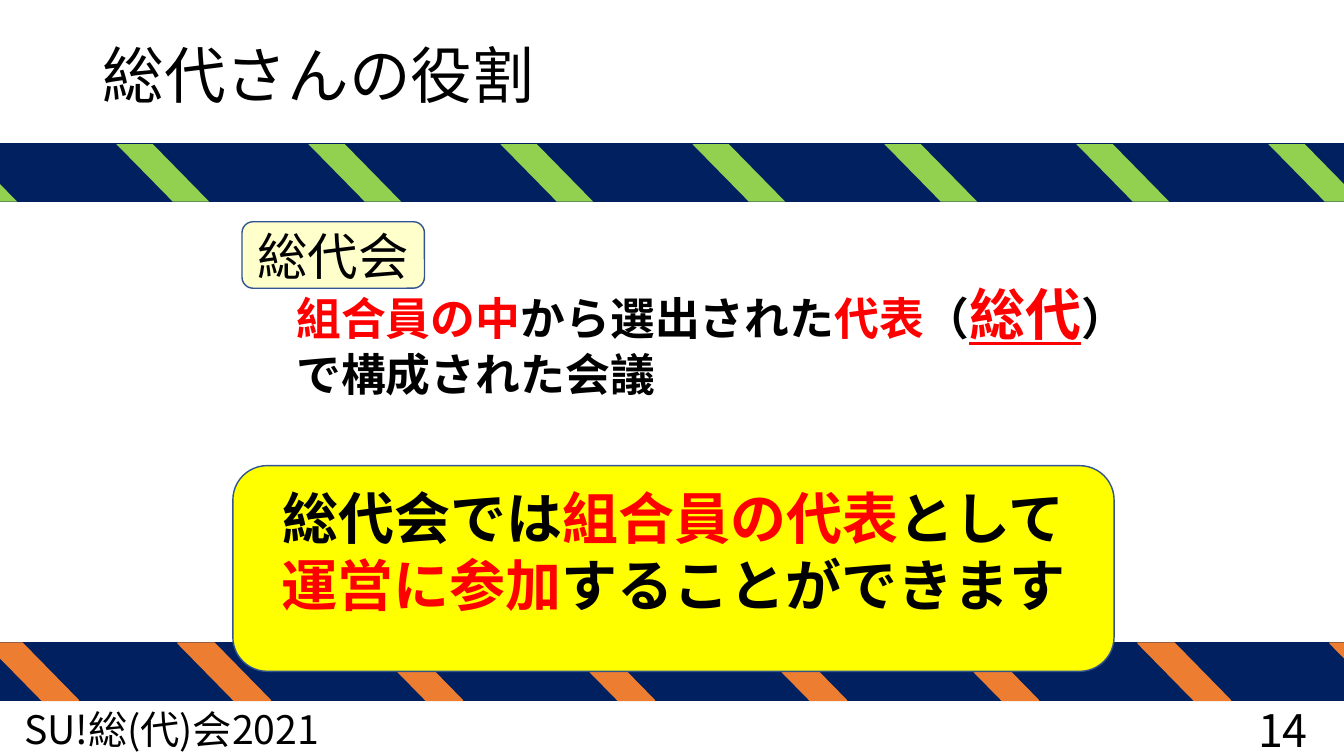
from dataclasses import dataclass

from lxml import etree
from pptx import Presentation
from pptx.dml.color import RGBColor
from pptx.enum.shapes import MSO_SHAPE
from pptx.enum.text import MSO_ANCHOR, PP_ALIGN
from pptx.oxml.ns import qn
from pptx.util import Inches, Pt

RECTANGLE = MSO_SHAPE.RECTANGLE
ROUNDED = MSO_SHAPE.ROUNDED_RECTANGLE
PARALLELOGRAM = MSO_SHAPE.PARALLELOGRAM
TOP, MIDDLE = MSO_ANCHOR.TOP, MSO_ANCHOR.MIDDLE
LEFT, CENTER = PP_ALIGN.LEFT, PP_ALIGN.CENTER

SLIDE_WIDTH, SLIDE_HEIGHT = 13.33, 7.5
BAND_HEIGHT = 0.57
STRIPE_COUNT = 8
STRIPE_PITCH = SLIDE_WIDTH / 7


@dataclass(frozen=True)
class Theme:
    font: str = "Noto Sans CJK JP"
    ink: str = "000000"
    accent: str = "FF0000"
    navy: str = "002060"
    green: str = "92D050"
    orange: str = "ED7D31"
    cream: str = "FFFFCC"
    yellow: str = "FFFF00"
    outline: str = "325491"
    title: int = 44
    emphasis: int = 40
    label: int = 36
    body: int = 32
    footer: int = 28


class SlideBuilder:
    def __init__(self, slide, theme):
        self.slide = slide
        self.theme = theme

    def shape(self, kind, box, fill, line=None):
        shape = self.slide.shapes.add_shape(kind, *map(Inches, box))
        shape.shadow.inherit = False
        shape.fill.solid()
        shape.fill.fore_color.rgb = RGBColor.from_string(fill)
        if line:
            shape.line.color.rgb = RGBColor.from_string(line)
            shape.line.width = Pt(1)
        else:
            shape.line.fill.background()
        return shape

    def striped_band(self, top, first_left, color, stripe_line=None):
        navy = self.theme.navy
        self.shape(RECTANGLE, (0, top, SLIDE_WIDTH, BAND_HEIGHT), navy, navy)
        for index in range(STRIPE_COUNT):
            left = first_left + index * STRIPE_PITCH
            stripe = self.shape(PARALLELOGRAM, (left, top, 0.92, BAND_HEIGHT), color, stripe_line)
            stripe.adjustments[0] = 0.98
            stripe._element.spPr.find(qn("a:xfrm")).set("flipH", "1")

    def fill_text(self, frame, lines, size, bold=False, align=LEFT, anchor=TOP, spacing=None):
        frame.word_wrap = True
        frame.vertical_anchor = anchor
        for index, line in enumerate(lines):
            paragraph = frame.add_paragraph() if index else frame.paragraphs[0]
            paragraph.alignment = align
            if spacing:
                paragraph.line_spacing = spacing
            paragraph.font.name = self.theme.font
            paragraph.font.size = Pt(size)
            paragraph.font.bold = bold
            paragraph.font.color.rgb = RGBColor.from_string(self.theme.ink)
            for latin in paragraph._p.iter(qn("a:latin")):
                east_asian = etree.Element(qn("a:ea"), typeface=self.theme.font)
                latin.addnext(east_asian)
            for text, *styles in line:
                run = paragraph.add_run()
                run.text = text
                if "accent" in styles:
                    run.font.color.rgb = RGBColor.from_string(self.theme.accent)
                if "emphasis" in styles:
                    run.font.size = Pt(self.theme.emphasis)
                    run.font.underline = True

    def text(self, box, lines, size, **style):
        frame = self.slide.shapes.add_textbox(*map(Inches, box)).text_frame
        self.fill_text(frame, lines, size, **style)

    def card(self, box, fill, lines, size, bottom=0.05, **style):
        frame = self.shape(ROUNDED, box, fill, self.theme.outline).text_frame
        frame.margin_bottom = Inches(bottom)
        self.fill_text(frame, lines, size, align=CENTER, anchor=MIDDLE, **style)


def main():
    presentation = Presentation()
    presentation.slide_width = Inches(SLIDE_WIDTH)
    presentation.slide_height = Inches(SLIDE_HEIGHT)
    theme = Theme()
    builder = SlideBuilder(presentation.slides.add_slide(presentation.slide_layouts[6]), theme)

    builder.striped_band(1.43, -0.75, theme.green)
    builder.striped_band(6.38, -0.14, theme.orange, theme.orange)
    builder.text((12.38, 6.92, 1.03, 0.64), [[("14",)]], theme.body)
    builder.text((0.14, 6.95, 4.79, 0.57), [[("SU!総(代)会2021",)]], theme.footer)

    builder.text((0.92, 0.18, 11.5, 1.2), [[("総代さんの役割",)]], theme.title,
                 anchor=MIDDLE, spacing=0.9)
    definition = [
        ("組合員の中", "accent"),
        ("から選出された",),
        ("代表", "accent"),
        ("（",),
        ("総代", "accent", "emphasis"),
        ("）で構成された会議",),
    ]
    builder.text((2.84, 2.72, 8.83, 1.31), [definition], theme.body, bold=True)
    builder.card((2.4, 2.2, 1.81, 0.66), theme.cream, [[("総代会",)]], theme.label)

    message = [
        [("総代会では",), ("組合員の代表", "accent"), ("として",)],
        [("運営に参加", "accent"), ("することができます",)],
    ]
    builder.card((2.31, 4.62, 8.74, 2.04), theme.yellow, message, theme.emphasis,
                 bottom=0.41, bold=True)

    presentation.save("out.pptx")


if __name__ == "__main__":
    main()
